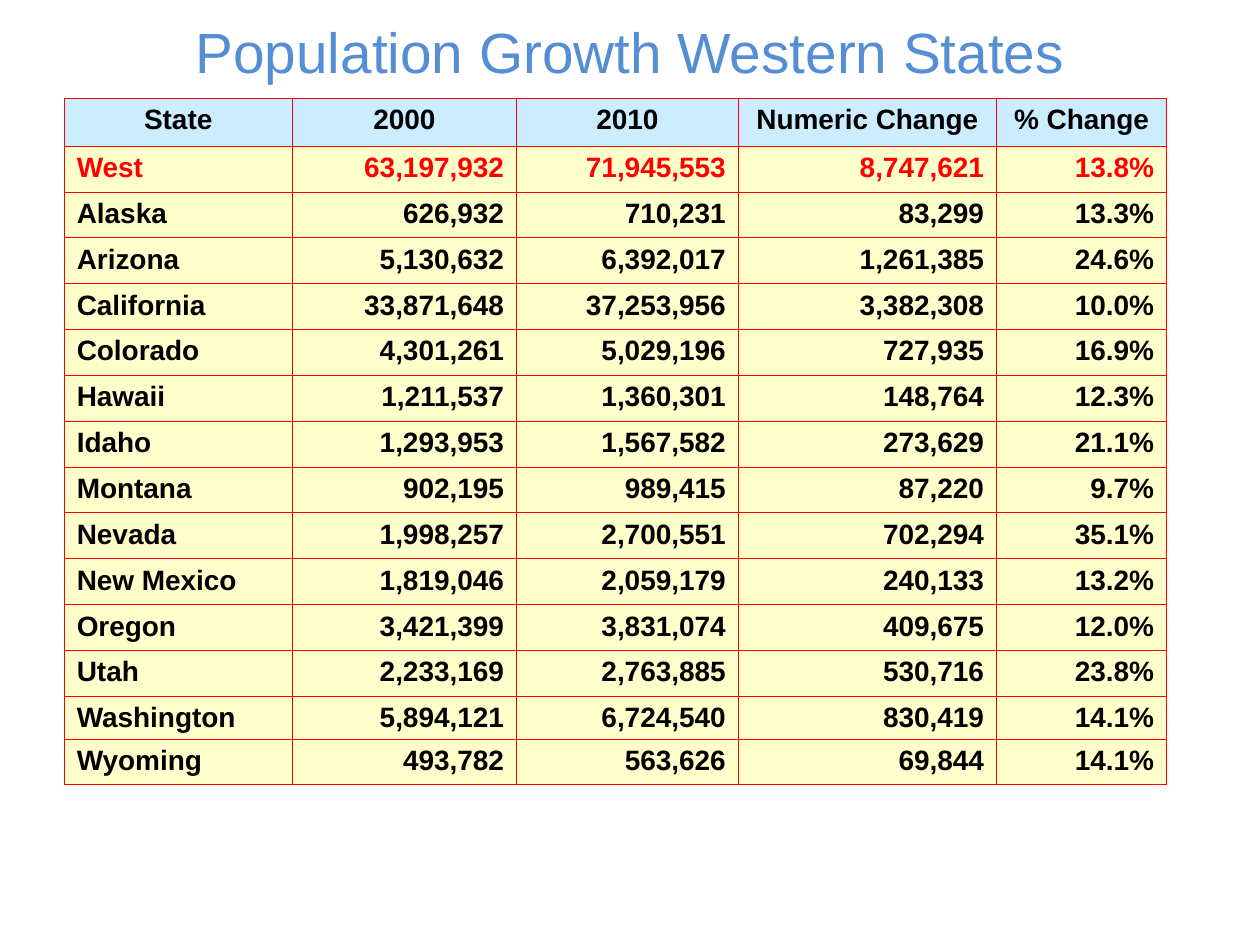
"""Build a slide with a table of population growth in the Western states."""
import pptx
import pptx.dml.color
import pptx.enum.text
import pptx.oxml
import pptx.oxml.ns
import pptx.util
from pptx.util import Inches

COLORS = {"title": "558ED5", "header": "CCECFF", "body": "FFFFCC",
          "text": "000000", "accent": "FF0000"}
ALIGN = pptx.enum.text.PP_ALIGN
ANCHOR = pptx.enum.text.MSO_ANCHOR

STATES = [
    ("State", "2000", "2010", "Numeric Change", "% Change"),
    ("West", "63,197,932", "71,945,553", "8,747,621", "13.8%"),
    ("Alaska", "626,932", "710,231", "83,299", "13.3%"),
    ("Arizona", "5,130,632", "6,392,017", "1,261,385", "24.6%"),
    ("California", "33,871,648", "37,253,956", "3,382,308", "10.0%"),
    ("Colorado", "4,301,261", "5,029,196", "727,935", "16.9%"),
    ("Hawaii", "1,211,537", "1,360,301", "148,764", "12.3%"),
    ("Idaho", "1,293,953", "1,567,582", "273,629", "21.1%"),
    ("Montana", "902,195", "989,415", "87,220", "9.7%"),
    ("Nevada", "1,998,257", "2,700,551", "702,294", "35.1%"),
    ("New Mexico", "1,819,046", "2,059,179", "240,133", "13.2%"),
    ("Oregon", "3,421,399", "3,831,074", "409,675", "12.0%"),
    ("Utah", "2,233,169", "2,763,885", "530,716", "23.8%"),
    ("Washington", "5,894,121", "6,724,540", "830,419", "14.1%"),
    ("Wyoming", "493,782", "563,626", "69,844", "14.1%"),
]
COLUMN_WIDTHS = [1.81, 1.78, 1.76, 2.05, 1.35]
TABLE_HEIGHT, HEADER_HEIGHT, WASHINGTON_HEIGHT = 5.45, 0.38, 0.34
STATE_HEIGHT = (TABLE_HEIGHT - HEADER_HEIGHT - WASHINGTON_HEIGHT) / (len(STATES) - 2)
SPECIAL_HEIGHTS = {"State": HEADER_HEIGHT, "Washington": WASHINGTON_HEIGHT}


def rgb(name):
    return pptx.dml.color.RGBColor.from_string(COLORS[name])


def add_borders(cell):
    properties = cell._tc.get_or_add_tcPr()
    for position, side in enumerate(("lnL", "lnR", "lnT", "lnB")):
        properties.insert(position, pptx.oxml.parse_xml(
            f'<a:{side} {pptx.oxml.ns.nsdecls("a")} w="{pptx.util.Pt(0.5)}"><a:solidFill>'
            f'<a:srgbClr val="{COLORS["accent"]}"/></a:solidFill></a:{side}>'))


prs = pptx.Presentation()
prs.slide_width, prs.slide_height = Inches(10), Inches(7.5)
slide = prs.slides.add_slide(prs.slide_layouts[5])

title = slide.shapes.title
title.left, title.top = Inches(0), Inches(0.23)
title.width, title.height = Inches(10), Inches(0.34)
title.text_frame.text = "Population Growth Western States"
title.text_frame.auto_size = pptx.enum.text.MSO_AUTO_SIZE.NONE
title.text_frame.vertical_anchor = ANCHOR.MIDDLE
heading = title.text_frame.paragraphs[0]
heading.alignment = ALIGN.CENTER
heading.runs[0].font.name = "Arial"
heading.runs[0].font.size = pptx.util.Pt(32.4)
heading.runs[0].font.color.rgb = rgb("title")

population = slide.shapes.add_table(
    len(STATES), len(COLUMN_WIDTHS), Inches(0.51), Inches(0.78),
    Inches(sum(COLUMN_WIDTHS)), Inches(TABLE_HEIGHT)).table
for column, width in zip(population.columns, COLUMN_WIDTHS):
    column.width = Inches(width)

for row_index, values in enumerate(STATES):
    state = values[0]
    population.rows[row_index].height = Inches(SPECIAL_HEIGHTS.get(state, STATE_HEIGHT))
    for column_index, value in enumerate(values):
        cell = population.cell(row_index, column_index)
        cell.margin_top, cell.margin_bottom = Inches(0.05), Inches(0.03)
        cell.vertical_anchor = ANCHOR.TOP
        cell.fill.solid()
        cell.fill.fore_color.rgb = rgb("header" if row_index == 0 else "body")
        add_borders(cell)
        cell.text_frame.text = value
        entry = cell.text_frame.paragraphs[0]
        if row_index == 0:
            entry.alignment = ALIGN.CENTER
        else:
            entry.alignment = ALIGN.RIGHT if column_index else ALIGN.LEFT
        font = entry.runs[0].font
        font.name, font.size, font.bold = "Arial", pptx.util.Pt(16), True
        font.color.rgb = rgb("accent" if state == "West" else "text")

prs.save("out.pptx")
